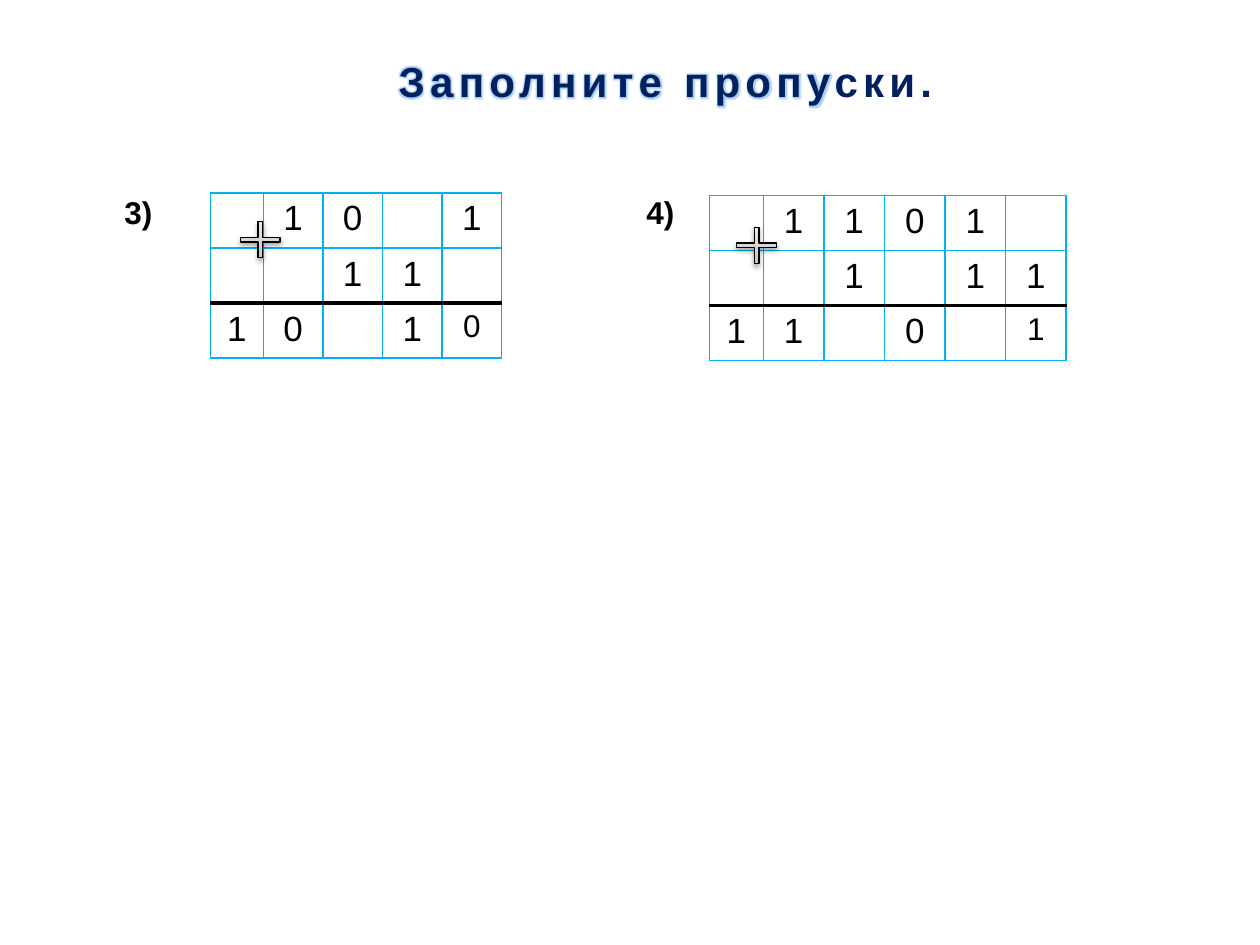
from lxml.etree import SubElement
from pptx import Presentation
from pptx.dml.color import RGBColor
from pptx.enum.shapes import MSO_SHAPE as Kind
from pptx.enum.text import MSO_ANCHOR as Anchor, MSO_AUTO_SIZE as Fit, PP_ALIGN as Align
from pptx.oxml import parse_xml
from pptx.oxml.ns import nsdecls, qn
from pptx.util import Cm, Pt

# Content: blanks are the gaps to fill in
TITLE = "Заполните пропуски."
SUMS = [
    {"label": "3)", "left": 2.26, "at": (4.24, 3.89), "cols": (1.07, 1.2),
     "plus": (4.7, 4.34), "rows": (" 10 1", "  11 ", "10 10")},
    {"label": "4)", "left": 12.78, "at": (14.3, 3.94), "cols": (1.09, 1.22),
     "plus": (14.71, 4.45), "rows": (" 1101 ", "  1 11", "11 0 1")},
]
HEX = {"title": "002060", "edge": "F4F5FA", "glow": "A8CDF2", "grid": "00B0F0",
       "ink": "000000", "cell": "FFFFFF"}
GREYS = [(0, "BDBDBD"), (35, "D1D1D1"), (100, "EEEEEE")]
ROW = 1.11


def style(font, size, hue="ink", bold=False):
    look = {"name": "Arial", "size": Pt(size), "bold": bold}
    for key, val in look.items():
        setattr(font, key, val)
    font.color.rgb = RGBColor.from_string(HEX[hue])


def edge(cell, side, hue, width):
    props = cell._tc.get_or_add_tcPr()
    line = SubElement(props, qn(f"a:ln{side}"), w=str(Pt(width)))
    fill = SubElement(line, qn("a:solidFill"))
    SubElement(fill, qn("a:srgbClr"), val=HEX[hue])


def add_title(slide):
    box = slide.shapes.title
    place = {"left": Cm(1.9), "top": Cm(0.33), "width": Cm(23.04), "height": Cm(2.59)}
    for key, val in place.items():
        setattr(box, key, val)
    frame = box.text_frame
    frame.text = TITLE
    frame.vertical_anchor = Anchor.MIDDLE
    para = frame.paragraphs[0]
    para.alignment = Align.CENTER
    run = para.runs[0]
    style(run.font, 24, "title", True)
    # Wide spacing, pale outline and soft glow
    props = run.font._element
    props.set("spc", "300")
    props.insert(0, parse_xml(
        f'<a:ln {nsdecls("a")} w="{Pt(0.9)}"><a:solidFill>'
        f'<a:srgbClr val="{HEX["edge"]}"/></a:solidFill></a:ln>'))
    props.insert(2, parse_xml(
        f'<a:effectLst {nsdecls("a")}><a:glow rad="{Pt(3)}">'
        f'<a:srgbClr val="{HEX["glow"]}"/></a:glow></a:effectLst>'))


def add_label(slide, text, left):
    box = slide.shapes.add_textbox(Cm(left), Cm(3.76), Cm(1.27), Cm(1.02))
    frame = box.text_frame
    frame.word_wrap = False
    frame.auto_size = Fit.SHAPE_TO_FIT_TEXT
    frame.text = text
    style(frame.paragraphs[0].runs[0].font, 18, bold=True)


def add_grid(slide, rows, at, cols):
    count = len(rows[0])
    wides = [cols[0]] + [cols[1]] * (count - 1)
    left, top = at
    table = slide.shapes.add_table(len(rows), count, Cm(left), Cm(top),
                                   Cm(sum(wides)), Cm(ROW * len(rows))).table
    for col, wide in zip(table.columns, wides):
        col.width = Cm(wide)
    last = len(rows) - 1
    for r, row in enumerate(rows):
        table.rows[r].height = Cm(ROW)
        for c, digit in enumerate(row):
            cell = table.cell(r, c)
            # A heavy rule parts the terms from the sum
            heavy = {"T": r == last, "B": r == last - 1}
            for side in "LRTB":
                edge(cell, side, *(("ink", 2.25) if heavy.get(side) else ("grid", 1)))
            cell.fill.solid()
            cell.fill.fore_color.rgb = RGBColor.from_string(HEX["cell"])
            if digit != " ":
                cell.text = digit
                para = cell.text_frame.paragraphs[0]
                para.alignment = Align.CENTER
                corner = r == last and c == count - 1
                style(para.runs[0].font, 18 if corner else 20)


def add_plus(slide, at):
    left, top = at
    plus = slide.shapes.add_shape(Kind.MATH_PLUS, Cm(left), Cm(top), Cm(1.09), Cm(0.99))
    plus.adjustments[0] = 0.09
    plus.line.color.rgb = RGBColor.from_string(HEX["ink"])
    plus.line.width = Pt(0.75)
    # Grey gradient and soft drop shadow
    stops = "".join(f'<a:gs pos="{pos * 1000}"><a:srgbClr val="{hue}"/></a:gs>'
                    for pos, hue in GREYS)
    props = plus._element.spPr
    props.find(qn("a:prstGeom")).addnext(parse_xml(
        f'<a:gradFill {nsdecls("a")} rotWithShape="1"><a:gsLst>{stops}</a:gsLst>'
        '<a:lin ang="16200000" scaled="1"/></a:gradFill>'))
    props.append(parse_xml(
        f'<a:effectLst {nsdecls("a")}><a:outerShdw blurRad="{Pt(3.1)}" dist="{Pt(1.6)}" '
        f'dir="5400000" rotWithShape="0"><a:srgbClr val="{HEX["ink"]}">'
        '<a:alpha val="38000"/></a:srgbClr></a:outerShdw></a:effectLst>'))


def main():
    deck = Presentation()
    deck.slide_width, deck.slide_height = Cm(25.4), Cm(19.05)
    slide = deck.slides.add_slide(deck.slide_layouts[5])
    add_title(slide)
    for task in SUMS:
        add_label(slide, task["label"], task["left"])
        add_grid(slide, task["rows"], task["at"], task["cols"])
        add_plus(slide, task["plus"])
    deck.save("out.pptx")


if __name__ == "__main__":
    main()
